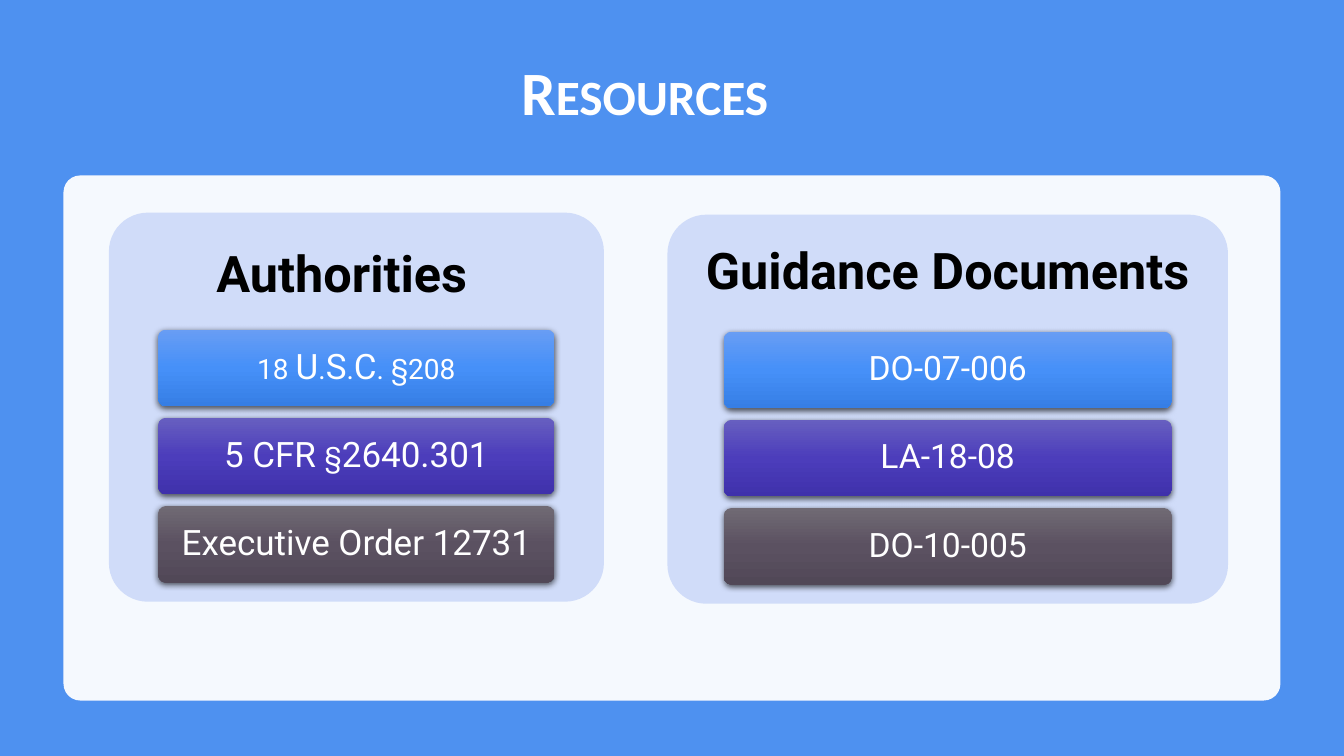
"""Build the Resources slide with its two panels of references."""
import lxml.etree
import pptx
import pptx.dml.color
import pptx.enum.shapes
import pptx.enum.text
import pptx.oxml.ns
import pptx.util

Inches = pptx.util.Inches
Pt = pptx.util.Pt
qn = pptx.oxml.ns.qn

GRADIENTS = [
    ("689DF4", "4690F8", "367EE5"),
    ("675FC0", "4C3DBB", "3F31AB"),
    ("706A74", "5B5161", "514857"),
]
BAR_HEIGHT, BAR_STEP, BAR_OFFSET = 0.76, 0.875, 1.16


def rgb(color):
    """Return the colour for a hex string."""
    return pptx.dml.color.RGBColor.from_string(color)


def add_color(parent, color, alpha=None):
    """Append a colour element, optionally with an opacity in percent."""
    e = lxml.etree.SubElement(parent, qn("a:srgbClr"), val=color)
    if alpha is not None:
        lxml.etree.SubElement(e, qn("a:alpha"), val=str(alpha * 1000))


def add_round_rect(slide, left, top, width, height, radius):
    """Add a rounded rectangle without line or shadow."""
    s = slide.shapes.add_shape(
        pptx.enum.shapes.MSO_SHAPE.ROUNDED_RECTANGLE,
        Inches(left), Inches(top), Inches(width), Inches(height))
    s.adjustments[0] = radius
    s.shadow.inherit = False
    s.line.fill.background()
    return s


def fill_solid(s, color, alpha=100):
    """Fill a shape with one colour at the given opacity."""
    s.fill.solid()
    s.fill.fore_color.rgb = rgb(color)
    if alpha < 100:
        clr = s._element.spPr.find(".//" + qn("a:srgbClr"))
        lxml.etree.SubElement(clr, qn("a:alpha"), val=str(alpha * 1000))


def fill_gradient(s, colors):
    """Fill a shape from top to bottom with evenly spaced colours."""
    s.fill.gradient()
    s.fill.gradient_angle = 270
    stops = s._element.spPr.find(".//" + qn("a:gsLst"))
    stops.clear()
    for i, color in enumerate(colors):
        pos = 100000 * i // (len(colors) - 1)
        add_color(lxml.etree.SubElement(stops, qn("a:gs"), pos=str(pos)), color)


def add_shadow(s):
    """Give a shape a soft shadow below it."""
    effects = s._element.spPr.find(qn("a:effectLst"))
    shadow = lxml.etree.SubElement(
        effects, qn("a:outerShdw"), blurRad=str(Pt(4.5)), dist=str(Pt(1.5)),
        dir="5400000", algn="ctr", rotWithShape="0")
    add_color(shadow, "000000", 63)


def write_text(s, runs, size, color, font="Roboto", bold=False,
               insets=(0.1, 0.05, 0.1, 0.05)):
    """Write one centred paragraph from (text, small caps) runs."""
    tf = s.text_frame
    tf.word_wrap = True
    tf.vertical_anchor = pptx.enum.text.MSO_ANCHOR.MIDDLE
    (tf.margin_left, tf.margin_top,
     tf.margin_right, tf.margin_bottom) = map(Inches, insets)
    p = tf.paragraphs[0]
    p.alignment = pptx.enum.text.PP_ALIGN.CENTER
    p.line_spacing = 0.9
    p.font.name = font
    p.font.size = Pt(size)
    p.font.bold = bold
    p.font.color.rgb = rgb(color)
    for text, small in runs:
        r = p.add_run()
        r.text = text
        if small:
            r.font._element.set("cap", "small")


def add_label(slide, left, top, width, height, runs, size, color, **style):
    """Add a text box holding one centred paragraph."""
    s = slide.shapes.add_textbox(
        Inches(left), Inches(top), Inches(width), Inches(height))
    write_text(s, runs, size, color, **style)


def add_panel(slide, left, top, width, heading, insets, bar_inset, size, bars):
    """Add a panel with a heading and a stack of gradient bars."""
    panel = add_round_rect(slide, left, top, width, 3.86, 0.1)
    fill_solid(panel, "D0DCF9")
    add_label(slide, left, top, width, BAR_OFFSET, [(heading, False)], 36,
              "000000", bold=True, insets=insets)
    for i, (runs, colors) in enumerate(zip(bars, GRADIENTS)):
        bar = add_round_rect(slide, left + bar_inset,
                             top + BAR_OFFSET + i * BAR_STEP,
                             width - 2 * bar_inset, BAR_HEIGHT, 0.1)
        fill_gradient(bar, colors)
        add_shadow(bar)
        write_text(bar, runs, size, "FFFFFF")


def main():
    """Build and save the slide."""
    prs = pptx.Presentation()
    prs.slide_width, prs.slide_height = Inches(13.33), Inches(7.5)
    slide = prs.slides.add_slide(prs.slide_layouts[6])
    slide.background.fill.solid()
    slide.background.fill.fore_color.rgb = rgb("4E91F0")
    add_label(slide, 0.92, 0.5, 11.5, 0.89, [("Resources", True)], 44,
              "FFFFFF", font="Calibri", bold=True,
              insets=(0.1, 0.05, 0.65, 0.05))
    card = add_round_rect(slide, 0.63, 1.74, 12.07, 5.21, 0.032)
    fill_solid(card, "FFFFFF", 95)
    add_panel(slide, 1.08, 2.11, 4.91, "Authorities",
              (0.15, 0.25, 0.44, 0.15), 0.49, 25, [
                  [("18 U.S.C. §208", True)],
                  [("5 CFR ", False), ("§", True), ("2640.301", False)],
                  [("Executive Order 12731", False)],
              ])
    add_panel(slide, 6.62, 2.13, 5.56, "Guidance Documents",
              (0.15, 0.15, 0.15, 0.15), 0.56, 24, [
                  [("DO-07-006", False)],
                  [("LA-18-08", False)],
                  [("DO-10-005", False)],
              ])
    prs.save("out.pptx")


if __name__ == "__main__":
    main()
